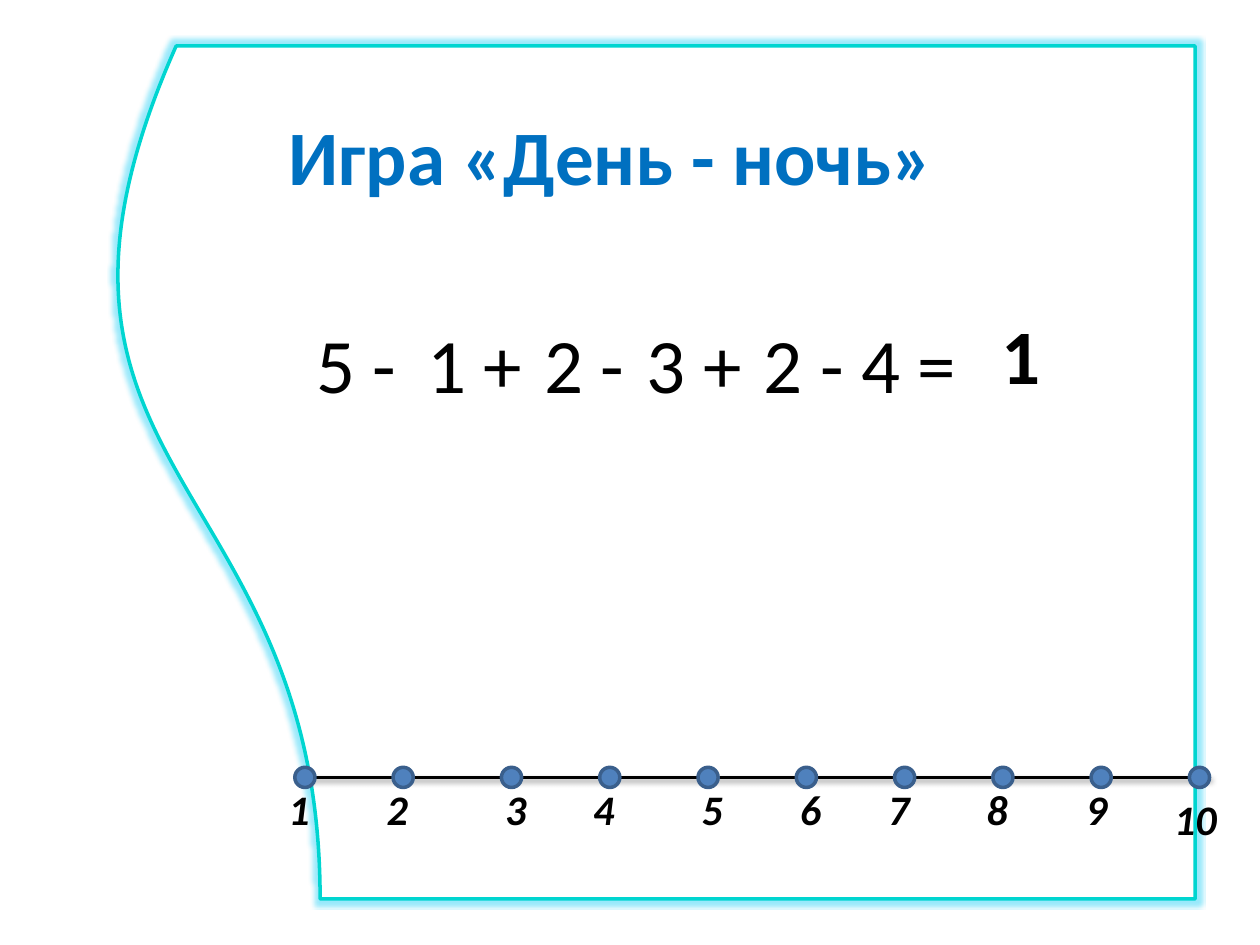
from lxml import etree
from pptx import Presentation
from pptx.dml.color import RGBColor
from pptx.enum.shapes import MSO_CONNECTOR, MSO_SHAPE
from pptx.enum.text import MSO_ANCHOR, PP_ALIGN
from pptx.oxml.ns import qn
from pptx.util import Inches, Pt

DOCUMENT, OVAL = MSO_SHAPE.FLOWCHART_DOCUMENT, MSO_SHAPE.OVAL
STRAIGHT = MSO_CONNECTOR.STRAIGHT
MIDDLE, TOP = MSO_ANCHOR.MIDDLE, MSO_ANCHOR.TOP
CENTER, LEFT = PP_ALIGN.CENTER, PP_ALIGN.LEFT

COLORS = {
    "paper": "FFFFFF", "frame": "00D5D0", "glow": "00C8F5", "ink": "000000",
    "dot": "4F81BD", "dot_line": "3A5F8C", "title": "0070C0",
}
FONT = "Calibri"

# Content
TITLE = "Игра «День - ночь»"
TERMS = ["5 -", "1 +", "2 -", "3 +", "2 -"]
LAST_TERM = "4 ="
ANSWER = "1"
LABEL_LEFTS = [2.19, 2.97, 3.91, 4.61, 5.47, 6.25, 6.95, 7.73, 8.52, 9.22]

# Layout, in inches
TERM_LEFTS = [2.09] + [3.03 + 0.87 * step for step in range(4)]
TERM_TOP, TERM_WIDTH, TERM_HEIGHT = 2.25, 1.48, 1.25
DOT_LEFTS = [2.34, 3.12] + [3.98 + 0.78 * step for step in range(8)]
DOT_TOP, DOT_SIZE = 6.09, 0.16
AXIS_TOP = DOT_TOP + DOT_SIZE / 2


def rgb(name):
    return RGBColor.from_string(COLORS[name])


def add_effect(parent, tag, color, alpha, **attributes):
    effect = etree.SubElement(parent, qn(tag), attributes)
    shade = etree.SubElement(effect, qn("a:srgbClr"), val=COLORS[color])
    etree.SubElement(shade, qn("a:alpha"), val=str(alpha * 1000))


def add_shape(slide, kind, place, fill, line):
    shape = slide.shapes.add_shape(kind, *map(Inches, place))
    shape.shadow.inherit = False
    shape.fill.solid()
    shape.fill.fore_color.rgb = rgb(fill)
    shape.line.color.rgb = rgb(line)
    shape.line.width = Pt(2)
    return shape


def add_text(slide, text, place, size=44, color="ink", bold=False,
             italic=False, align=CENTER, anchor=MIDDLE):
    box = slide.shapes.add_textbox(*map(Inches, place))
    frame = box.text_frame
    frame.word_wrap = True
    frame.vertical_anchor = anchor
    para = frame.paragraphs[0]
    para.text = text
    para.alignment = align
    font = para.font
    font.name, font.size, font.bold, font.italic = FONT, Pt(size), bold, italic
    font.color.rgb = rgb(color)
    return box


def main():
    deck = Presentation()
    deck.slide_width, deck.slide_height = Inches(10), Inches(7.5)
    slide = deck.slides.add_slide(deck.slide_layouts[6])

    # Glowing wavy frame
    frame = add_shape(slide, DOCUMENT, (1.77, -0.58, 6.77, 8.66), "paper", "frame")
    frame.rotation = 90
    effects = frame._element.spPr.find(qn("a:effectLst"))
    add_effect(effects, "a:glow", "glow", 40, rad=str(Pt(5)))

    # Number line with a soft shadow
    axis = slide.shapes.add_connector(
        STRAIGHT, Inches(2.46), Inches(AXIS_TOP), Inches(9.61), Inches(AXIS_TOP))
    axis.line.color.rgb = rgb("ink")
    axis.line.width = Pt(2)
    effects = etree.SubElement(axis._element.spPr, qn("a:effectLst"))
    add_effect(effects, "a:outerShdw", "ink", 38, blurRad=str(Pt(3.1)),
               dist=str(Pt(1.6)), dir="5400000", rotWithShape="0")

    for left in DOT_LEFTS:
        add_shape(slide, OVAL, (left, DOT_TOP, DOT_SIZE, DOT_SIZE), "dot", "dot_line")

    for number, left in enumerate(LABEL_LEFTS, start=1):
        top = 6.25 if number == 10 else AXIS_TOP
        add_text(slide, str(number), (left, top, 0.55, 0.5), size=24,
                 bold=True, italic=True, align=LEFT, anchor=TOP)

    # Sum and its answer
    for term, left in zip(TERMS, TERM_LEFTS):
        add_text(slide, term, (left, TERM_TOP, TERM_WIDTH, TERM_HEIGHT))
    last = add_text(slide, LAST_TERM, (6.65, TERM_TOP, 1.41, TERM_HEIGHT))
    last.text_frame.margin_right = Inches(0.38)
    add_text(slide, ANSWER, (7.36, 2.18, TERM_WIDTH, TERM_HEIGHT), bold=True)

    # Title
    add_text(slide, TITLE, (0.35, 0.6, 9, 1.25), color="title", bold=True)

    deck.save("out.pptx")


if __name__ == "__main__":
    main()
